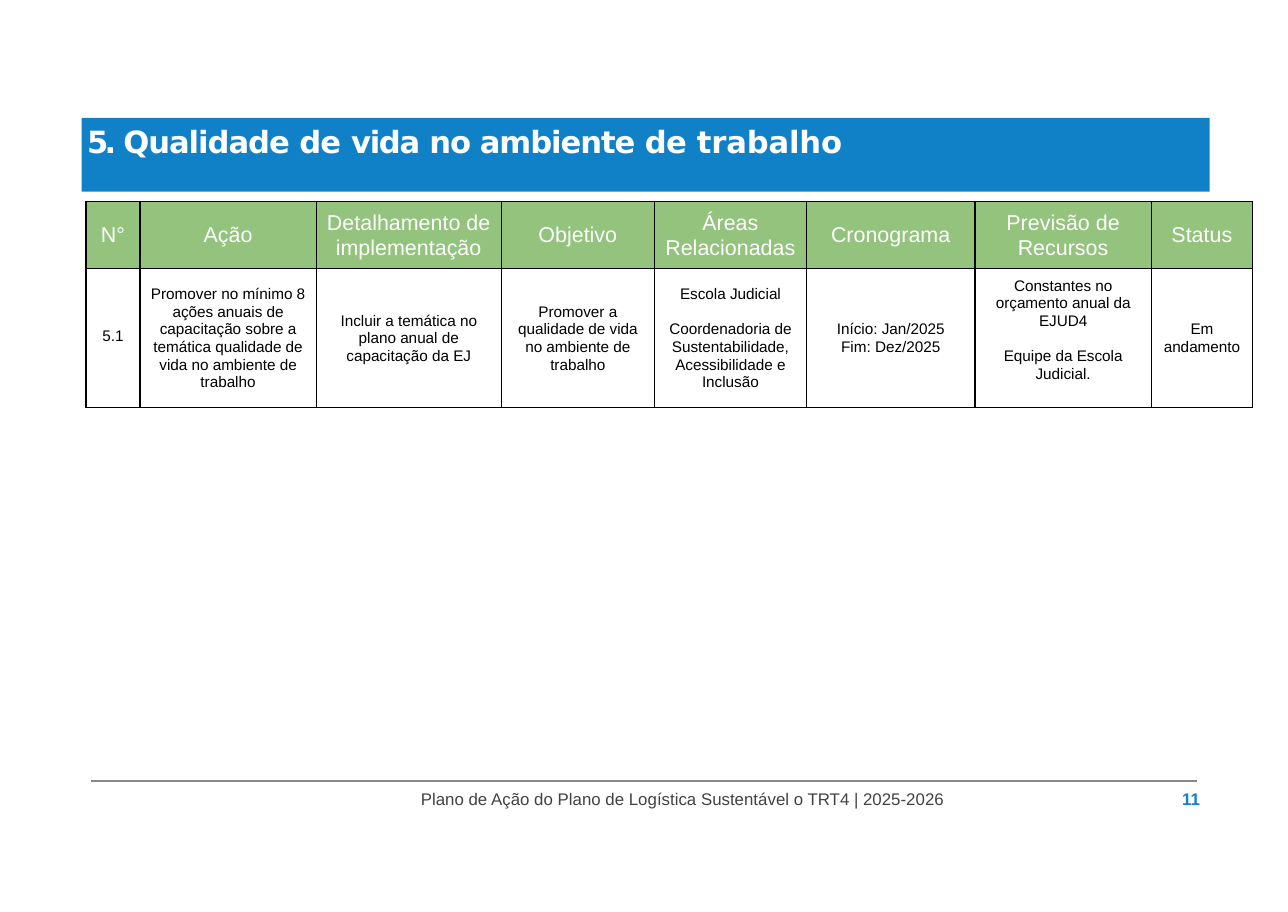
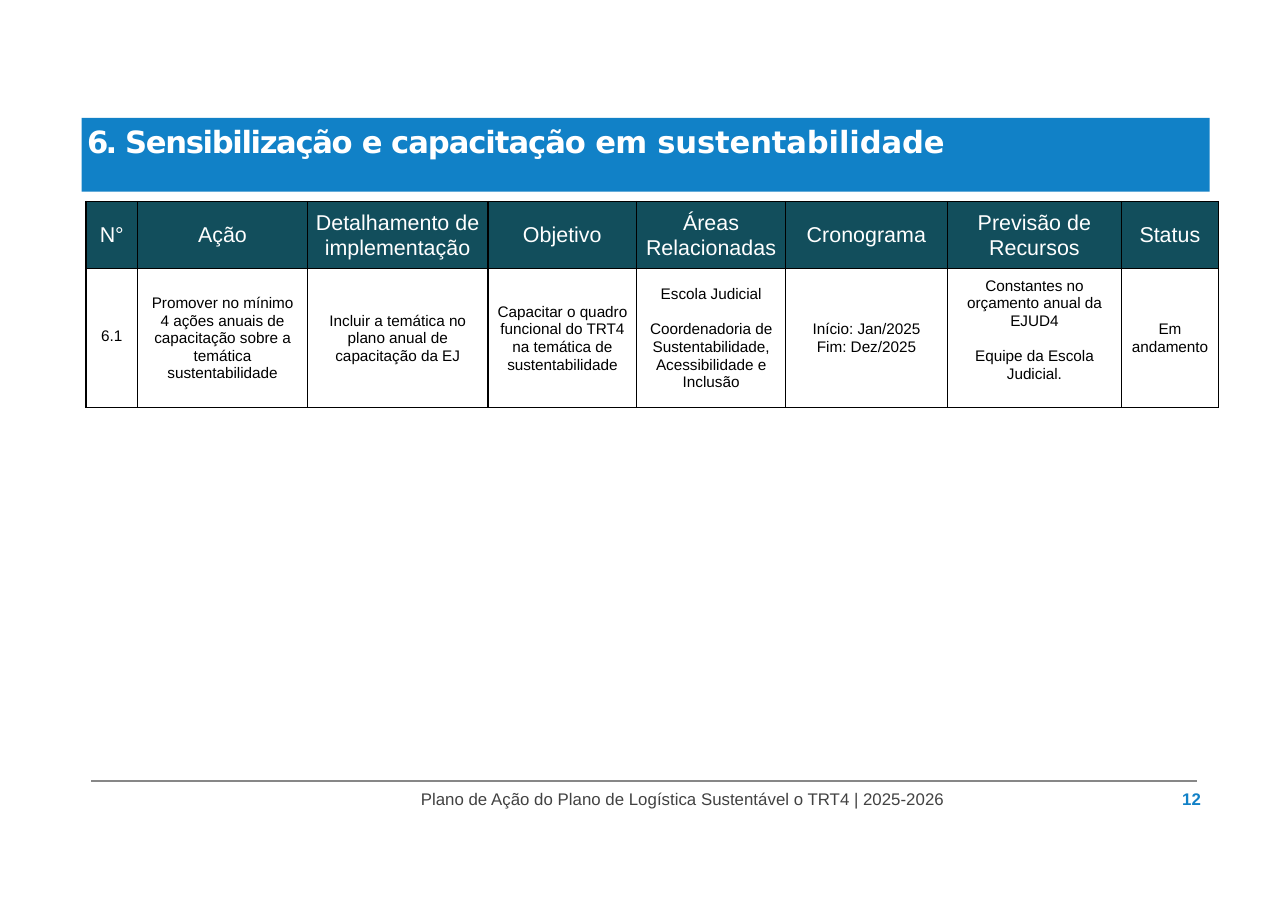
from lxml import etree
from pptx import Presentation
from pptx import util as u
from pptx.dml.color import RGBColor
from pptx.enum import shapes, text
from pptx.oxml.ns import qn

# Shared colours, fonts and wording
BLUE, WHITE, BLACK, GREY, LINE = "1181C7", "FFFFFF", "000000", "424242", "878787"
GREEN, TEAL = "93C37D", "124E5C"
TITLE_FONT, BODY_FONT = "DejaVu Sans", "Arial"
FOOTER = "Plano de Ação do Plano de Logística Sustentável o TRT4 | 2025-2026"
HEADERS = ["N°", "Ação", "Detalhamento de implementação", "Objetivo",
           "Áreas Relacionadas", "Cronograma", "Previsão de Recursos", "Status"]
ROW_HEIGHTS = [0.61, 1.26]

# Shared cell contents
DETAIL = "Incluir a temática no plano anual de capacitação da EJ"
AREAS = ["Escola Judicial",
         "Coordenadoria de Sustentabilidade, Acessibilidade e Inclusão"]
SCHEDULE = "Início: Jan/2025 Fim: Dez/2025"
RESOURCES = ["Constantes no orçamento anual da EJUD4", "Equipe da Escola Judicial."]
STATUS = "Em andamento"

SECTIONS = [
    dict(page=11, color=GREEN, number="5.1",
         title=[("5. ", -2.4), ("Qualidade ", -0.7), ("de ", -0.5), ("vida ", -0.9),
                ("no ambiente ", -0.7), ("de ", -0.5), ("trabalho", -0.1)],
         widths=[0.49, 1.6, 1.68, 1.39, 1.38, 1.53, 1.6, 0.92],
         action="Promover no mínimo 8 ações anuais de capacitação sobre a "
                "temática qualidade de vida no ambiente de trabalho",
         goal="Promover a qualidade de vida no ambiente de trabalho",
         action_margin=0.07, goal_margin=0.1),
    dict(page=12, color=TEAL, number="6.1",
         title=[("6. ", -1.8), ("Sensibilização ", -0.9), ("e capacitação ", -0.7),
                ("em ", -0.5), ("sustentabilidade", -0.1)],
         widths=[0.47, 1.54, 1.64, 1.35, 1.35, 1.47, 1.58, 0.88],
         action="Promover no mínimo 4 ações anuais de capacitação sobre a "
                "temática sustentabilidade",
         goal="Capacitar o quadro funcional do TRT4 na temática de sustentabilidade",
         action_margin=0.1, goal_margin=0.06),
]


def rgb(color):
    return RGBColor.from_string(color)


def set_font(p, name, size, color, bold=False):
    p.font.name, p.font.size, p.font.bold = name, u.Pt(size), bold
    p.font.color.rgb = rgb(color)


def set_margins(box, left=0, top=0, right=0, bottom=0):
    box.margin_left, box.margin_top = u.Inches(left), u.Inches(top)
    box.margin_right, box.margin_bottom = u.Inches(right), u.Inches(bottom)


def place(sp, left, top, width, height):
    sp.left, sp.top = u.Inches(left), u.Inches(top)
    sp.width, sp.height = u.Inches(width), u.Inches(height)


def add_title(slide, runs, left, top, width, height):
    """Blue title band with letter-spaced runs."""
    sp = slide.shapes.title
    place(sp, left, top, width, height)
    sp.fill.solid()
    sp.fill.fore_color.rgb = rgb(BLUE)
    tf = sp.text_frame
    tf.word_wrap = True
    tf.auto_size = text.MSO_AUTO_SIZE.NONE
    tf.vertical_anchor = text.MSO_ANCHOR.TOP
    set_margins(tf, left=0.05, top=0.05)
    p = tf.paragraphs[0]
    p.alignment = text.PP_ALIGN.LEFT
    p.space_before = u.Pt(0)
    set_font(p, TITLE_FONT, 20, WHITE, bold=True)
    for words, spacing in runs:
        r = p.add_run()
        r.text = words
        r.font._element.set("spc", str(round(spacing * 100)))


def set_borders(cell):
    tc_pr = cell._tc.get_or_add_tcPr()
    for i, side in enumerate(("a:lnL", "a:lnR", "a:lnT", "a:lnB")):
        ln = etree.Element(qn(side), w=str(u.Pt(1)))
        fill = etree.SubElement(ln, qn("a:solidFill"))
        etree.SubElement(fill, qn("a:srgbClr"), val=BLACK)
        tc_pr.insert(i, ln)


def fill_cell(cell, content, size, color, line, margin, bottom=0):
    """Centred cell text; each item of a list is a paragraph."""
    set_borders(cell)
    set_margins(cell, left=margin, right=margin, bottom=bottom)
    cell.vertical_anchor = text.MSO_ANCHOR.MIDDLE
    paragraphs = [content] if isinstance(content, str) else content
    tf = cell.text_frame
    for i, words in enumerate(paragraphs):
        p = tf.add_paragraph() if i else tf.paragraphs[0]
        p.text = words
        p.alignment = text.PP_ALIGN.CENTER
        p.line_spacing = u.Pt(line)
        p.space_before = u.Pt(line if i else 0)
        set_font(p, BODY_FONT, size, color)


def add_action_table(slide, section, left, top):
    widths = section["widths"]
    table = slide.shapes.add_table(
        len(ROW_HEIGHTS), len(widths), u.Inches(left), u.Inches(top),
        u.Inches(sum(widths)), u.Inches(sum(ROW_HEIGHTS))).table
    table.horz_banding = False
    for row, height in zip(table.rows, ROW_HEIGHTS):
        row.height = u.Inches(height)

    # Content, side margin and bottom margin of each body cell
    body = [(section["number"], 0.05, 0.04),
            (section["action"], section["action_margin"], 0),
            (DETAIL, 0.1, 0),
            (section["goal"], section["goal_margin"], 0),
            (AREAS, 0.1, 0),
            (SCHEDULE, 0.2, 0),
            (RESOURCES, 0.1, 0.15),
            (STATUS, 0.08, 0)]
    for i, (header, (content, margin, bottom)) in enumerate(zip(HEADERS, body)):
        table.columns[i].width = u.Inches(widths[i])
        head, cell = table.cell(0, i), table.cell(1, i)
        head.fill.solid()
        head.fill.fore_color.rgb = rgb(section["color"])
        fill_cell(head, header, 14, WHITE, 16.1, 0.03)
        cell.fill.background()
        fill_cell(cell, content, 10, BLACK, 11.5, margin, bottom)


def add_label(slide, words, color, bold, left, top, width, height):
    tf = slide.shapes.add_textbox(u.Inches(left), u.Inches(top),
                                  u.Inches(width), u.Inches(height)).text_frame
    tf.word_wrap = True
    set_margins(tf, left=0.01)
    p = tf.paragraphs[0]
    p.text = words
    p.line_spacing = u.Pt(13.2)
    set_font(p, BODY_FONT, 11, color, bold)


def add_footer(slide, page, left, top, width):
    """Rule with the document name and page number below it."""
    rule = slide.shapes.add_connector(
        shapes.MSO_CONNECTOR.STRAIGHT, u.Inches(left), u.Inches(top),
        u.Inches(left + width), u.Inches(top))
    rule.line.color.rgb = rgb(LINE)
    rule.line.width = u.Pt(1)
    etree.SubElement(rule._element.spPr, qn("a:effectLst"))
    add_label(slide, FOOTER, GREY, False, left + 2.98, top + 0.07, 4.86, 0.3)
    add_label(slide, str(page), BLUE, True, left + width - 0.14, top + 0.07, 0.24, 0.2)


def add_section(prs, section):
    slide = prs.slides.add_slide(prs.slide_layouts.get_by_name("Title Only"))
    add_title(slide, section["title"], 0.74, 1.07, 10.24, 0.67)
    add_action_table(slide, section, 0.78, 1.83)
    add_footer(slide, section["page"], 0.83, 7.09, 10.03)


def main():
    prs = Presentation()
    prs.slide_width, prs.slide_height = u.Inches(11.69), u.Inches(8.28)
    for section in SECTIONS:
        add_section(prs, section)
    prs.save("out.pptx")


if __name__ == "__main__":
    main()
